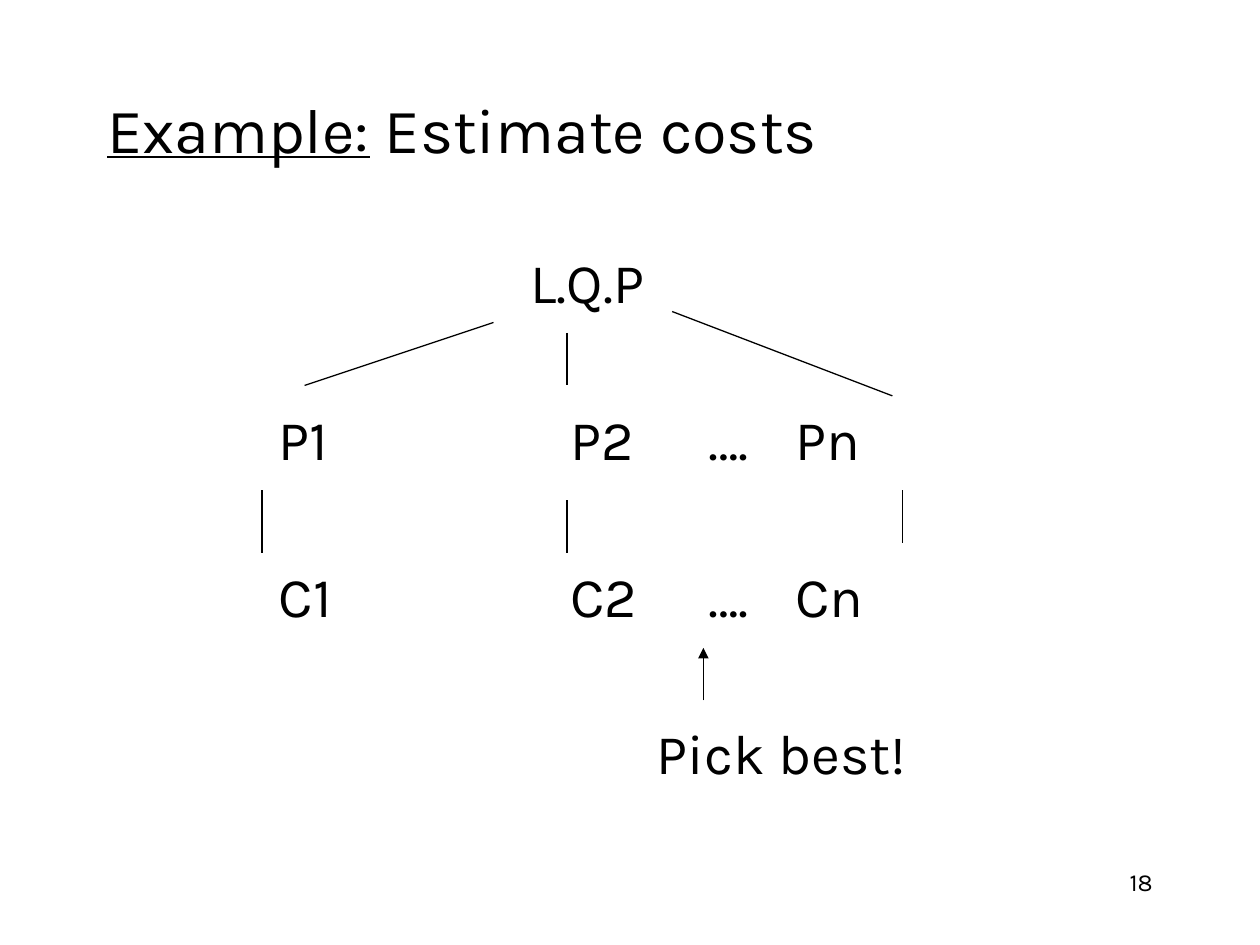
from pptx import Presentation
from pptx.dml.color import RGBColor
from pptx.enum.shapes import MSO_CONNECTOR as Conn
from pptx.enum.text import MSO_ANCHOR as Anchor, PP_ALIGN as Align
from pptx.oxml.ns import qn
from pptx.util import Cm, Pt
from lxml.etree import SubElement as Sub

BLACK = RGBColor(0, 0, 0)
WHITE = RGBColor(255, 255, 255)


class Board:
    font = "Karla"
    ink = BLACK
    width = Pt(0.75)

    def __init__(self, slide):
        self.slide = slide
        fill = slide.background.fill
        fill.solid()
        fill.fore_color.rgb = WHITE

    def text(self, box, runs, size, align=Align.LEFT, anchor=Anchor.TOP):
        frame = self.slide.shapes.add_textbox(*map(Cm, box)).text_frame
        frame.word_wrap = True
        frame.vertical_anchor = anchor
        frame.margin_left = frame.margin_right = 0
        frame.margin_top = frame.margin_bottom = 0
        para = frame.paragraphs[0]
        para.alignment = align
        para.font.name = self.font
        para.font.size = Pt(size)
        para.font.color.rgb = self.ink
        for words, under in runs:
            run = para.add_run()
            run.text = words
            if under:
                run.font.underline = True

    def label(self, left, top, words, width=3):
        self.text((left, top, width, 1.32), [(words, False)], 32)

    def line(self, start, end, arrow=False):
        link = self.slide.shapes.add_connector(
            Conn.STRAIGHT, *map(Cm, start + end))
        link.line.color.rgb = self.ink
        link.line.width = self.width
        if arrow:
            Sub(link.line._get_or_add_ln(), qn("a:tailEnd"), type="triangle")
        Sub(link._element.spPr, qn("a:effectLst"))


def main():
    deck = Presentation()
    deck.slide_width, deck.slide_height = Cm(25.4), Cm(19.05)
    board = Board(deck.slides.add_slide(deck.slide_layouts[6]))

    board.text((2.16, 0.99, 21.08, 3.18),
               [("Example:", True), (" Estimate costs", False)],
               36, anchor=Anchor.MIDDLE)
    board.text((18.2, 17.48, 5.04, 0.8), [("18", False)], 14, Align.RIGHT)

    top, pitch = 5, 3.16
    cols = 5.62, 11.5, 14.28, 16.04
    rows = ("P1", "P2", "….", "Pn"), ("C1", "C2", "….", "Cn")
    board.label(10.7, top, "L.Q.P")
    for i, row in enumerate(rows, 1):
        for left, words in zip(cols, row):
            board.label(left, top + i * pitch, words, 1.7)
    board.label(13.24, top + 3 * pitch, "Pick best!", 7)

    for start, end in (
        ((9.95, 6.5), (6.14, 7.77)),
        ((11.43, 6.71), (11.43, 7.77)),
        ((13.55, 6.28), (17.99, 7.98)),
        ((5.28, 9.88), (5.28, 11.15)),
        ((11.43, 10.08), (11.43, 11.15)),
        ((18.2, 9.88), (18.2, 10.95)),
    ):
        board.line(start, end)
    board.line((14.18, 14.12), (14.18, 13.06), arrow=True)

    deck.save("out.pptx")


if __name__ == "__main__":
    main()
